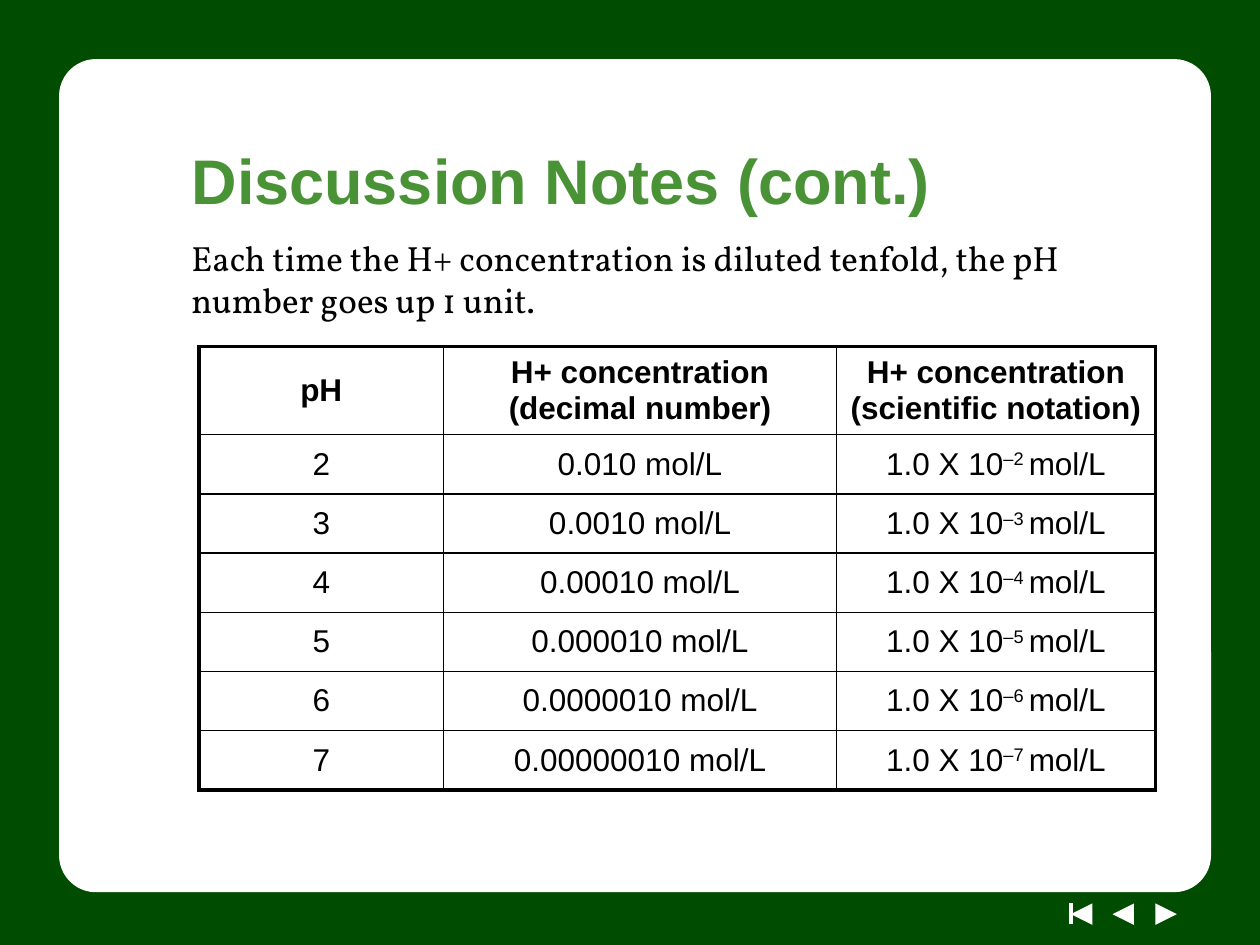
from lxml.etree import SubElement
from pptx import Presentation
from pptx.dml.color import RGBColor
from pptx.enum.shapes import MSO_CONNECTOR, MSO_SHAPE
from pptx.enum.text import MSO_ANCHOR, PP_ALIGN
from pptx.oxml.ns import qn
from pptx.util import Inches, Pt

DARK_GREEN = RGBColor(0x00, 0x4C, 0x01)
TITLE_GREEN = RGBColor(0x49, 0x92, 0x35)
WHITE = RGBColor(0xFF, 0xFF, 0xFF)
BLACK = RGBColor(0x00, 0x00, 0x00)
THICK, THIN = 2.25, 1


def add_run(paragraph, text, size, font="Arial", color=BLACK, bold=False):
    run = paragraph.add_run()
    run.text = text
    run.font.size = Pt(size)
    run.font.name = font
    run.font.color.rgb = color
    run.font.bold = bold
    return run


def add_shape(kind, left, top, width, height, color):
    shape = slide.shapes.add_shape(kind, Inches(left), Inches(top), Inches(width), Inches(height))
    shape.shadow.inherit = False
    shape.fill.solid()
    shape.fill.fore_color.rgb = color
    shape.line.fill.background()
    return shape


prs = Presentation()
prs.slide_width, prs.slide_height = Inches(10), Inches(7.5)
slide = prs.slides.add_slide(prs.slide_layouts[5])

add_shape(MSO_SHAPE.RECTANGLE, 0, 0, 10, 7.5, DARK_GREEN)
for left, rotation in ((9.17, 90), (8.83, 270), (8.5, 270)):
    arrow = add_shape(MSO_SHAPE.ISOSCELES_TRIANGLE, left, 7.17, 0.17, 0.17, WHITE)
    arrow.rotation = rotation
first_bar = slide.shapes.add_connector(
    MSO_CONNECTOR.STRAIGHT, Inches(8.5), Inches(7.17), Inches(8.5), Inches(7.33))
first_bar.line.color.rgb = WHITE
first_bar.line.width = Pt(2)
SubElement(first_bar.element.spPr, qn("a:effectLst"))

panel = add_shape(MSO_SHAPE.ROUNDED_RECTANGLE, 0.5, 0.5, 9.08, 6.55, WHITE)
panel.adjustments[0] = 0.04
panel.line.color.rgb = WHITE
panel.line.width = Pt(4.5)

title = slide.shapes.title
title.element.getparent().append(title.element)
title.left, title.top, title.width, title.height = map(Inches, (1.42, 0.92, 8.08, 1))
title.text_frame.vertical_anchor = MSO_ANCHOR.MIDDLE
heading = title.text_frame.paragraphs[0]
heading.alignment = PP_ALIGN.LEFT
add_run(heading, "Discussion Notes (cont.)", 36, color=TITLE_GREEN, bold=True)

body = slide.shapes.add_textbox(Inches(1.42), Inches(1.83), Inches(7.83), Inches(0.85))
body.text_frame.word_wrap = True
statement = body.text_frame.paragraphs[0]
statement.space_before = Pt(4)
add_run(statement, "Each time the H+ concentration is diluted tenfold, "
        "the pH number goes up 1 unit.", 20, "Vollkorn")

rows = [[["pH"], ["H+ concentration (decimal number)"], ["H+ concentration (scientific notation)"]]]
for ph in range(2, 8):
    rows.append([[str(ph)], [f"0.{'0' * (ph - 1)}10 mol/L"], ["1.0 X 10", f"–{ph} ", "mol/L"]])

col_widths = (1.94, 3.12, 2.53)
row_heights = [0.7] + [0.47] * 6
table = slide.shapes.add_table(
    len(rows), len(col_widths), Inches(1.58), Inches(2.75),
    Inches(sum(col_widths)), Inches(sum(row_heights))).table
table.first_row = False
table.horz_banding = False
for column, width in zip(table.columns, col_widths):
    column.width = Inches(width)
for row, height in zip(table.rows, row_heights):
    row.height = Inches(height)

for r, row in enumerate(rows):
    for c, parts in enumerate(row):
        cell = table.cell(r, c)
        cell.vertical_anchor = MSO_ANCHOR.MIDDLE
        paragraph = cell.text_frame.paragraphs[0]
        paragraph.alignment = PP_ALIGN.CENTER
        paragraph.space_before = Pt(3.6)
        for i, part in enumerate(parts):
            run = add_run(paragraph, part, 18, bold=r == 0)
            if i == 1:
                run.font._element.set("baseline", "30000")
        outer_edges = {"L": c == 0, "R": c == len(row) - 1, "T": r == 0, "B": r == len(rows) - 1}
        properties = cell._tc.get_or_add_tcPr()
        for side, is_outer in outer_edges.items():
            border = SubElement(properties, qn(f"a:ln{side}"), w=str(Pt(THICK if is_outer else THIN)))
            border_fill = SubElement(border, qn("a:solidFill"))
            SubElement(border_fill, qn("a:srgbClr"), val=str(BLACK))
        cell.fill.background()

prs.save("out.pptx")
